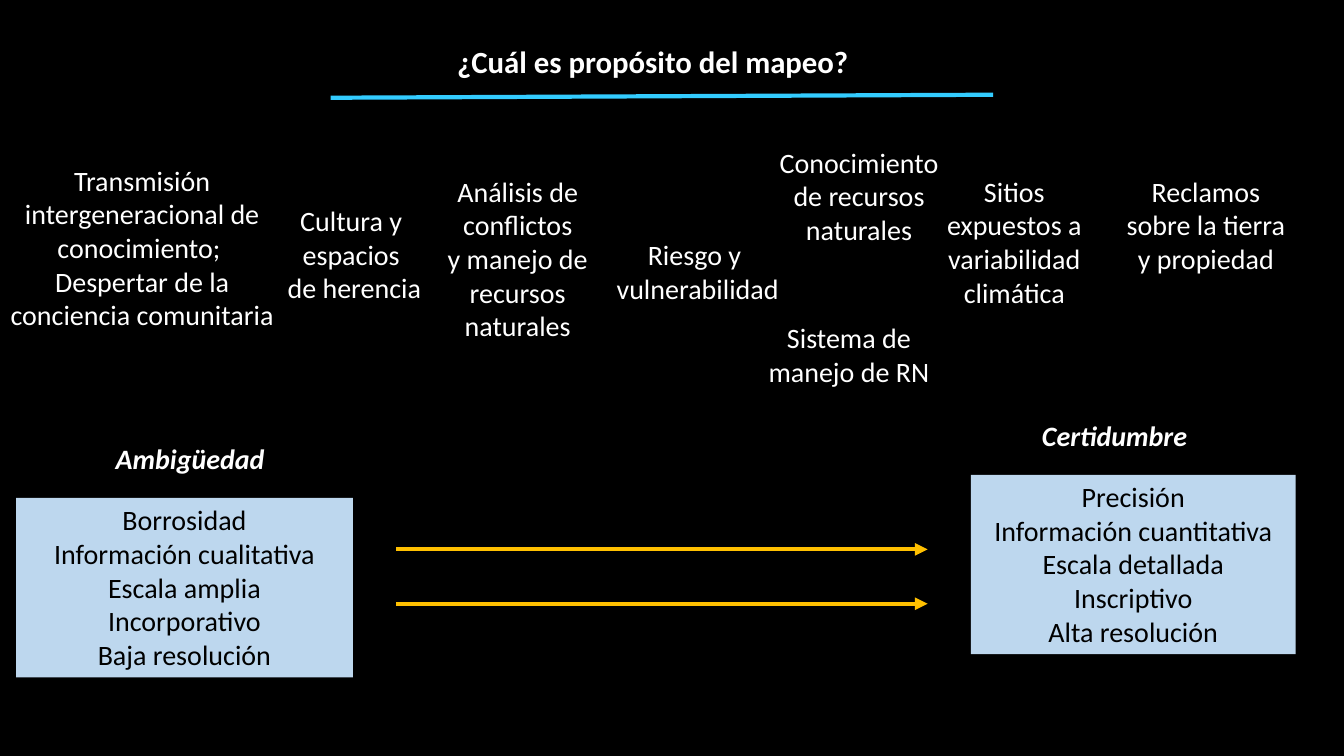
from lxml import etree
from pptx import Presentation
from pptx.dml.color import RGBColor
from pptx.enum import shapes, text
from pptx.oxml import ns
from pptx.util import Inches, Pt

BLACK = RGBColor(0x00, 0x00, 0x00)
WHITE = RGBColor(0xFF, 0xFF, 0xFF)
PALE_BLUE = RGBColor(0xBD, 0xD7, 0xEE)
SKY = RGBColor(0x33, 0xCC, 0xFF)
AMBER = RGBColor(0xFF, 0xC0, 0x00)

PURPOSES = [
    ((0, 1.57, 2.82, 2.12),
     "Transmisión intergeneracional de conocimiento; \nDespertar de la conciencia comunitaria"),
    ((2.48, 1.97, 2.07, 1.11), "Cultura y \nespacios \nde herencia"),
    ((4.11, 1.68, 2.05, 1.78), "Análisis de conflictos\ny manejo de recursos naturales"),
    ((5.96, 2.31, 1.92, 0.77), "Riesgo y \nvulnerabilidad"),
    ((7.46, 3.13, 1.92, 0.77), "Sistema de manejo de RN"),
    ((7.56, 1.39, 1.92, 1.11), "Conocimiento de recursos naturales"),
    ((9.1, 1.68, 1.92, 1.45), "Sitios expuestos a variabilidad climática"),
    ((11, 1.68, 1.92, 1.11), "Reclamos sobre la tierra y propiedad"),
]
AMBIGUITY = "Borrosidad\nInformación cualitativa\nEscala amplia\nIncorporativo\nBaja resolución"
CERTAINTY = "Precisión\nInformación cuantitativa\nEscala detallada\nInscriptivo\nAlta resolución"


def write(shape, words, color=WHITE, size=20, bold=False, italic=False, wrap=True):
    """Fill a shape with centred text that starts at its top."""
    frame = shape.text_frame
    frame.text = words
    frame.word_wrap = wrap
    frame.auto_size = text.MSO_AUTO_SIZE.SHAPE_TO_FIT_TEXT
    frame.vertical_anchor = text.MSO_ANCHOR.TOP
    for para in frame.paragraphs:
        para.alignment = text.PP_ALIGN.CENTER
        for span in para.runs:
            font = span.font
            font.name, font.size = "Calibri", Pt(size)
            font.bold, font.italic = bold, italic
            font.color.rgb = color


def add_line(page, start, end, color, arrow=False):
    """Draw a straight line, with an arrowhead at its end if asked."""
    line = page.shapes.add_connector(
        shapes.MSO_CONNECTOR.STRAIGHT, *map(Inches, start + end))
    line.line.color.rgb = color
    line.line.width = Pt(3)
    if arrow:
        outline = line.line._get_or_add_ln()
        etree.SubElement(outline, ns.qn("a:tailEnd"), type="triangle")
    etree.SubElement(line._element.spPr, ns.qn("a:effectLst"))


def add_heading(page, left, top, width, height):
    """Place the title and the rule under it."""
    title = page.shapes.title
    title.left, title.top = Inches(left), Inches(top)
    title.width, title.height = Inches(width), Inches(height)
    write(title, "¿Cuál es propósito del mapeo?", size=22, bold=True)
    add_line(page, (left - 0.17, top + 0.6), (left + 6.4, top + 0.57), SKY)


def add_purposes(page):
    """Place the mapping purposes along the spectrum."""
    for box, words in PURPOSES:
        write(page.shapes.add_textbox(*map(Inches, box)), words)


def add_pole(page, left, top, width, name, name_left, name_width, traits):
    """Place one end of the spectrum: its name above a panel of traits."""
    label = page.shapes.add_textbox(
        Inches(name_left), Inches(top - 0.61), Inches(name_width), Inches(0.44))
    write(label, name, bold=True, italic=True, wrap=False)
    panel = page.shapes.add_shape(
        shapes.MSO_SHAPE.RECTANGLE, Inches(left), Inches(top), Inches(width), Inches(1.78))
    panel.shadow.inherit = False
    panel.fill.solid()
    panel.fill.fore_color.rgb = PALE_BLUE
    panel.line.fill.background()
    write(panel, traits, BLACK)


def main():
    """Build the slide and save the deck."""
    deck = Presentation()
    deck.slide_width, deck.slide_height = Inches(13.33), Inches(7.5)
    page = deck.slides.add_slide(deck.slide_layouts[5])
    page.background.fill.solid()
    page.background.fill.fore_color.rgb = BLACK
    add_heading(page, 3.45, 0.37, 6.05, 0.47)
    add_purposes(page)
    add_pole(page, 0.16, 4.94, 3.34, "Ambigüedad", 1.04, 1.69, AMBIGUITY)
    add_pole(page, 9.63, 4.71, 3.22, "Certidumbre", 10.23, 1.65, CERTAINTY)
    for height in (5.45, 5.99):
        add_line(page, (3.93, height), (9.2, height), AMBER, arrow=True)
    deck.save("out.pptx")


if __name__ == "__main__":
    main()
